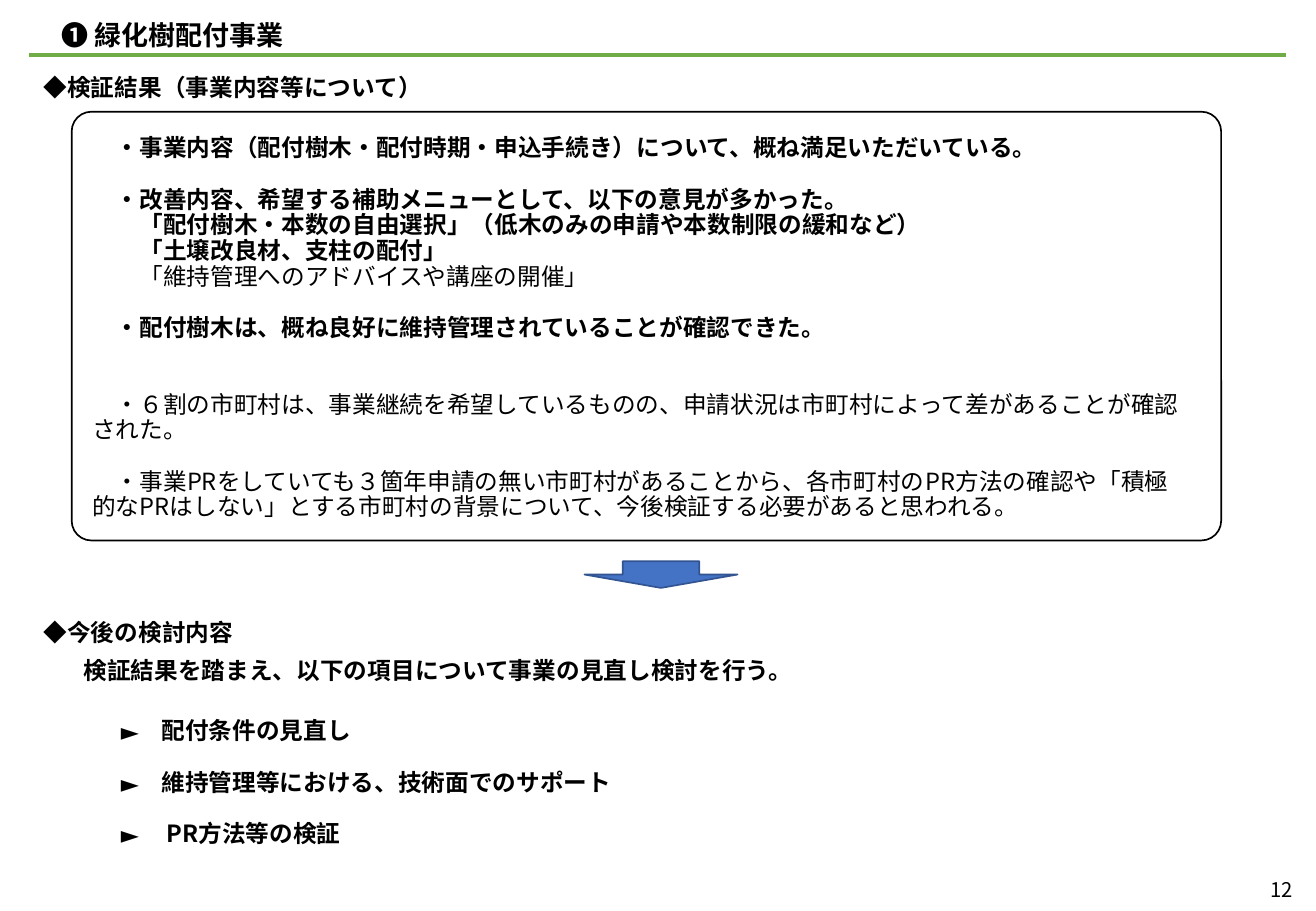
from dataclasses import dataclass

from lxml.etree import SubElement
from pptx import Presentation
from pptx.dml.color import RGBColor as Rgb
from pptx.enum.shapes import MSO_CONNECTOR as Connector, MSO_SHAPE as Shape
from pptx.enum.text import MSO_ANCHOR as Anchor, PP_ALIGN as Align
from pptx.oxml.ns import qn
from pptx.util import Inches, Pt


@dataclass(frozen=True)
class Theme:
    ink: Rgb = Rgb(0x00, 0x00, 0x00)
    rule: Rgb = Rgb(0x70, 0xAD, 0x47)
    arrow: Rgb = Rgb(0x44, 0x72, 0xC4)
    arrow_edge: Rgb = Rgb(0x32, 0x54, 0x91)
    heading_font: str = "Arial"
    body_font: str = "Noto Sans CJK JP"
    title_size: int = 16
    body_size: int = 14
    number_size: int = 12
    line_pitch: float = 15.2


THEME = Theme()
WIDTH, HEIGHT = 10.83, 7.5
EM = THEME.body_size  # one full-width character, in points

# (text, bold, indent in characters, blank lines above)
FINDINGS = [
    ("・事業内容（配付樹木・配付時期・申込手続き）について、概ね満足いただいている。", True, 1, 0),
    ("・改善内容、希望する補助メニューとして、以下の意見が多かった。", True, 1, 1),
    ("「配付樹木・本数の自由選択」（低木のみの申請や本数制限の緩和など）", True, 2, 0),
    ("「土壌改良材、支柱の配付」", True, 2, 0),
    ("「維持管理へのアドバイスや講座の開催」", False, 2, 0),
    ("・配付樹木は、概ね良好に維持管理されていることが確認できた。", True, 1, 1),
    ("・６割の市町村は、事業継続を希望しているものの、申請状況は市町村によって差があることが確認された。", False, 1, 2),
    ("・事業PRをしていても３箇年申請の無い市町村があることから、各市町村のPR方法の確認や「積極的なPRはしない」とする市町村の背景について、今後検証する必要があると思われる。", False, 1, 1),
]
# (text, left margin in points)
REVIEW_ITEMS = [
    ("配付条件の見直し", 41),
    ("維持管理等における、技術面でのサポート", 41),
    ("PR方法等の検証", 44),
]


def style_para(para, size, font, bold=True):
    for run in para.runs:
        run.font.size = Pt(size)
        run.font.bold = bold
        run.font.color.rgb = THEME.ink
        run.font.name = font
        SubElement(run.font._element, qn("a:ea")).set("typeface", THEME.body_font)


def set_indent(para, margin, first):
    props = para._p.get_or_add_pPr()
    props.set("marL", str(Pt(margin)))
    props.set("indent", str(Pt(first)))


def set_frame(frame, anchor=Anchor.TOP, side=0.08, edge=0.04):
    frame.word_wrap = True
    frame.vertical_anchor = anchor
    frame.margin_left = frame.margin_right = Inches(side)
    frame.margin_top = frame.margin_bottom = Inches(edge)


def add_text(page, box, **frame_options):
    frame = page.shapes.add_textbox(*map(Inches, box)).text_frame
    set_frame(frame, **frame_options)
    return frame


def add_title(page, box):
    title = page.shapes.title
    title.left, title.top, title.width, title.height = map(Inches, box)
    set_frame(title.text_frame, Anchor.BOTTOM)
    para = title.text_frame.paragraphs[0]
    para.text = "❶ 緑化樹配付事業"
    para.alignment = Align.LEFT
    para.line_spacing = 0.9
    style_para(para, THEME.title_size, THEME.heading_font)

    # Green rule under the title
    left, right, level = Inches(0.24), Inches(WIDTH - 0.25), Inches(0.45)
    rule = page.shapes.add_connector(Connector.STRAIGHT, left, level, right, level)
    rule.line.color.rgb = THEME.rule
    rule.line.width = Pt(2.5)
    SubElement(rule._element.spPr, qn("a:effectLst"))


def add_line(page, box, text, size=THEME.body_size, font=THEME.heading_font,
             bold=True, spacing=1.0, **frame_options):
    para = add_text(page, box, **frame_options).paragraphs[0]
    para.text = text
    para.line_spacing = spacing
    style_para(para, size, font, bold)


def add_preset(page, kind, box, edge, fill=None):
    shape = page.shapes.add_shape(kind, *map(Inches, box))
    shape.shadow.inherit = False
    if fill is None:
        shape.fill.background()
    else:
        shape.fill.solid()
        shape.fill.fore_color.rgb = fill
    shape.line.color.rgb = edge
    shape.line.width = Pt(1)
    return shape


def add_body(page, box, texts):
    """Place one fixed-pitch paragraph for each text and return them."""
    frame = add_text(page, box)
    frame.text = "\n".join(texts)
    for para in frame.paragraphs:
        para.line_spacing = Pt(THEME.line_pitch)
    return frame.paragraphs


def add_findings(page, box):
    left, top, width, height = box
    outline = add_preset(page, Shape.ROUNDED_RECTANGLE, box, THEME.ink)
    outline.adjustments[0] = 0.046

    inner = (left + 0.09, top + 0.16, width - 0.29, height - 0.43)
    paras = add_body(page, inner, [row[0] for row in FINDINGS])
    for para, (_, bold, indent, blanks) in zip(paras, FINDINGS):
        set_indent(para, 0, indent * EM)
        para.space_before = Pt(blanks * THEME.line_pitch)
        style_para(para, THEME.body_size, THEME.body_font, bold)


def add_review(page, box):
    paras = add_body(page, box, [row[0] for row in REVIEW_ITEMS])
    for number, (para, (_, margin)) in enumerate(zip(paras, REVIEW_ITEMS)):
        set_indent(para, margin, 17 - margin)
        para.space_before = Pt(THEME.line_pitch if number else 0)
        style_para(para, THEME.body_size, THEME.body_font)
        props = para._p.get_or_add_pPr()
        SubElement(props, qn("a:buFont")).set("typeface", THEME.body_font)
        SubElement(props, qn("a:buChar")).set("char", "►")


def build_slide(deck):
    page = deck.slides.add_slide(deck.slide_layouts[5])
    add_title(page, (0.43, 0.09, 4.65, 0.37))

    # Results of the review
    add_line(page, (0.28, 0.55, 7.86, 0.37), "◆検証結果（事業内容等について）",
             spacing=0.9, anchor=Anchor.MIDDLE)
    add_findings(page, (0.59, 0.92, 9.46, 3.53))
    add_preset(page, Shape.DOWN_ARROW, (4.81, 4.62, 1.26, 0.22),
               THEME.arrow_edge, THEME.arrow)

    # Points to examine next
    add_line(page, (0.28, 4.99, 7.86, 0.37), "◆今後の検討内容",
             spacing=0.9, anchor=Anchor.BOTTOM)
    add_line(page, (0.59, 5.35, 7.17, 0.34),
             "検証結果を踏まえ、以下の項目について事業の見直し検討を行う。",
             side=0.1, edge=0.05)
    add_review(page, (0.68, 5.88, 9.9, 1.44))

    # Page number
    add_line(page, (WIDTH - 0.47, HEIGHT - 0.33, 0.46, 0.3), "12",
             THEME.number_size, THEME.body_font, bold=False, side=0.1, edge=0.05)


def main():
    deck = Presentation()
    deck.slide_width, deck.slide_height = Inches(WIDTH), Inches(HEIGHT)
    build_slide(deck)
    deck.save("out.pptx")


if __name__ == "__main__":
    main()
